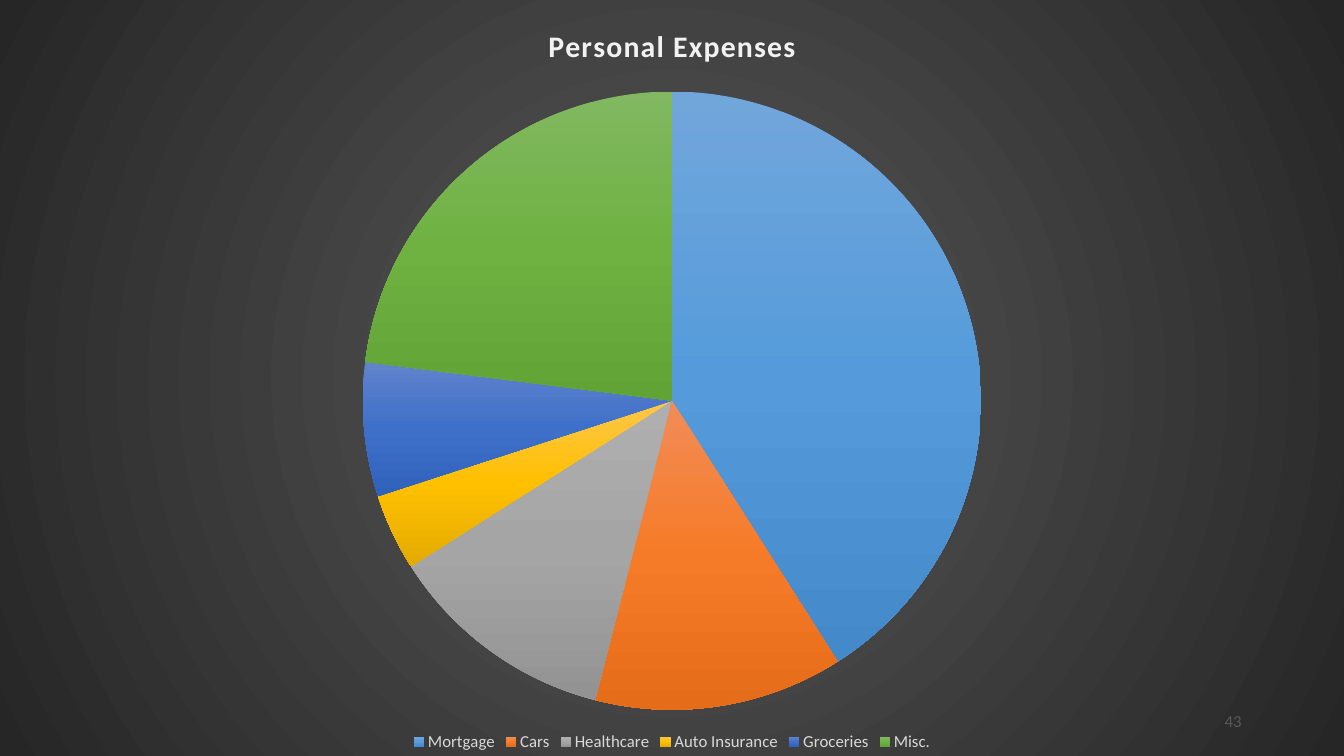
from pptx import Presentation
from pptx.chart.data import CategoryChartData as ChartData
from pptx.dml.color import RGBColor
from pptx.enum.chart import XL_CHART_TYPE as Kind, XL_LEGEND_POSITION as Place
from pptx.enum.text import MSO_ANCHOR as Anchor, PP_ALIGN as Align
from pptx.oxml import parse_xml
from pptx.oxml.ns import nsdecls
from pptx.util import Pt

WIDE, HIGH = 960, 540
WHITE = RGBColor(0xF2, 0xF2, 0xF2)
LIGHT = RGBColor(0xD9, 0xD9, 0xD9)
GREY = RGBColor(0x59, 0x59, 0x59)
DARK = RGBColor(0x26, 0x26, 0x26)
BLACK = RGBColor(0, 0, 0)
COSTS = [
    ("Mortgage", 41, (RGBColor(0x71, 0xA6, 0xDB), RGBColor(0x55, 0x9B, 0xDB), RGBColor(0x44, 0x8A, 0xCA))),
    ("Cars", 13, (RGBColor(0xF1, 0x8C, 0x57), RGBColor(0xF6, 0x7B, 0x28), RGBColor(0xE5, 0x6C, 0x19))),
    ("Healthcare", 12, (RGBColor(0xAF, 0xAF, 0xAF), RGBColor(0xA5, 0xA5, 0xA5), RGBColor(0x93, 0x93, 0x93))),
    ("Auto Insurance", 4, (RGBColor(0xFF, 0xC6, 0x4B), RGBColor(0xFF, 0xC0, 0x00), RGBColor(0xE3, 0xAB, 0x00))),
    ("Groceries", 7, (RGBColor(0x61, 0x83, 0xCB), RGBColor(0x3E, 0x70, 0xCA), RGBColor(0x30, 0x62, 0xBB))),
    ("Misc.", 23, (RGBColor(0x81, 0xB8, 0x61), RGBColor(0x6F, 0xB2, 0x42), RGBColor(0x62, 0xA3, 0x36))),
]
LINEAR = '<a:lin ang="5400000" scaled="0"/>'
RADIAL = '<a:path path="circle"><a:fillToRect l="50000" t="50000" r="50000" b="50000"/></a:path>'


class Board:
    face = "Calibri"

    def __init__(self, slide):
        self.slide = slide

    def style(self, font, size, color, bold=False):
        font.name = self.face
        font.size = Pt(size)
        font.bold = bold
        font.color.rgb = color

    def blend(self, colors, course):
        step = 100000 // (len(colors) - 1)
        stops = "".join(
            f'<a:gs pos="{i * step}"><a:srgbClr val="{color}"/></a:gs>'
            for i, color in enumerate(colors)
        )
        return parse_xml(
            f'<a:gradFill {nsdecls("a")} rotWithShape="1"><a:gsLst>{stops}</a:gsLst>{course}</a:gradFill>'
        )

    def text(self, words, left, top, width, height, size, color):
        frame = self.slide.shapes.add_textbox(Pt(left), Pt(top), Pt(width), Pt(height)).text_frame
        frame.word_wrap = True
        frame.vertical_anchor = Anchor.MIDDLE
        frame.text = words
        line = frame.paragraphs[0]
        line.alignment = Align.RIGHT
        self.style(line.runs[0].font, size, color)

    def pie(self, title, costs, left, top, width, height):
        data = ChartData()
        data.categories = [name for name, _, _ in costs]
        data.add_series("Series 1", [value for _, value, _ in costs])
        chart = self.slide.shapes.add_chart(
            Kind.PIE, Pt(left), Pt(top), Pt(width), Pt(height), data
        ).chart
        self.style(chart.font, 10, BLACK)
        self.head(chart, title)
        chart.has_legend = True
        chart.legend.position = Place.BOTTOM
        chart.legend.include_in_layout = False
        self.style(chart.legend.font, 12, LIGHT)
        plot = chart.plots[0]
        plot.vary_by_categories = True
        self.paint(chart, plot.series[0], costs)
        self.back(chart)
        self.fit(chart, 0.27, 0.12, 0.46, 0.82)

    def head(self, chart, title):
        chart.has_title = True
        frame = chart.chart_title.text_frame
        frame.text = title
        run = frame.paragraphs[0].runs[0]
        self.style(run.font, 21.3, WHITE, True)
        run.font._element.set("spc", "100")
        chart.chart_title.include_in_layout = False

    def paint(self, chart, series, costs):
        for i in range(len(costs)):
            form = series.points[i].format
            form.fill.solid()
            form.line.fill.background()
        props = chart.element.xpath(".//c:dPt/c:spPr")
        for prop, (_, _, colors) in zip(props, costs):
            prop.replace(prop[0], self.blend(colors, LINEAR))

    def back(self, chart):
        prop = parse_xml(
            f'<c:spPr {nsdecls("c", "a")}><a:ln><a:noFill/></a:ln></c:spPr>'
        )
        prop.insert(0, self.blend((GREY, DARK), RADIAL))
        chart.element.xpath("c:chart")[0].addnext(prop)

    def fit(self, chart, left, top, width, height):
        area = chart.element.xpath("c:chart/c:plotArea")[0]
        for old in area.xpath("c:layout"):
            area.remove(old)
        sizes = "".join(
            f'<c:{key} val="{value}"/>'
            for key, value in zip("xywh", (left, top, width, height))
        )
        area.insert(0, parse_xml(
            f'<c:layout {nsdecls("c")}><c:manualLayout><c:layoutTarget val="inner"/>'
            f'<c:xMode val="edge"/><c:yMode val="edge"/>{sizes}</c:manualLayout></c:layout>'
        ))


def main():
    deck = Presentation()
    deck.slide_width, deck.slide_height = Pt(WIDE), Pt(HIGH)
    board = Board(deck.slides.add_slide(deck.slide_layouts[6]))
    board.pie("Personal Expenses", COSTS, 0, 0, WIDE, HIGH)
    board.text("43", 678, 500.5, 216, 28.75, 12, GREY)
    deck.save("out.pptx")


if __name__ == "__main__":
    main()
